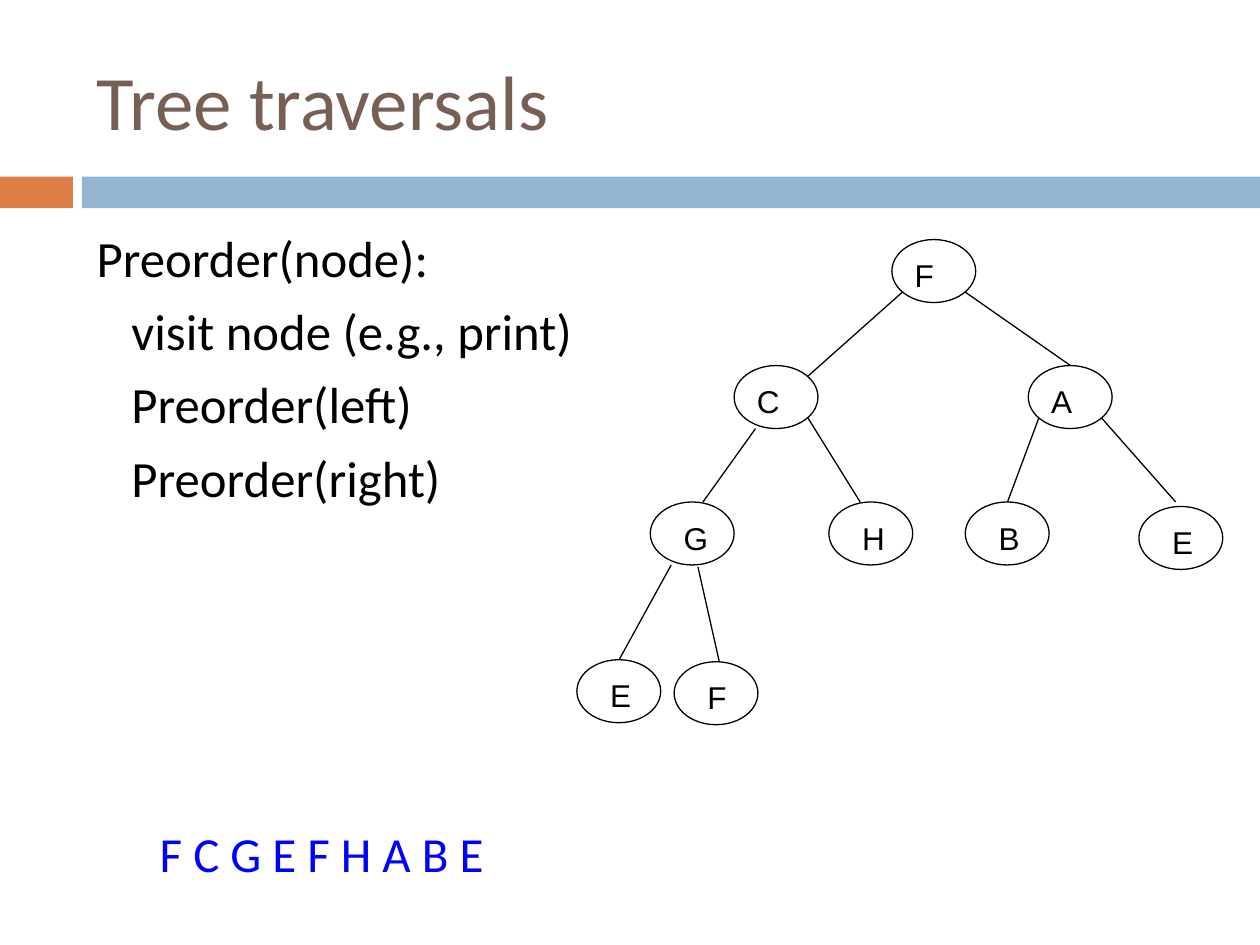
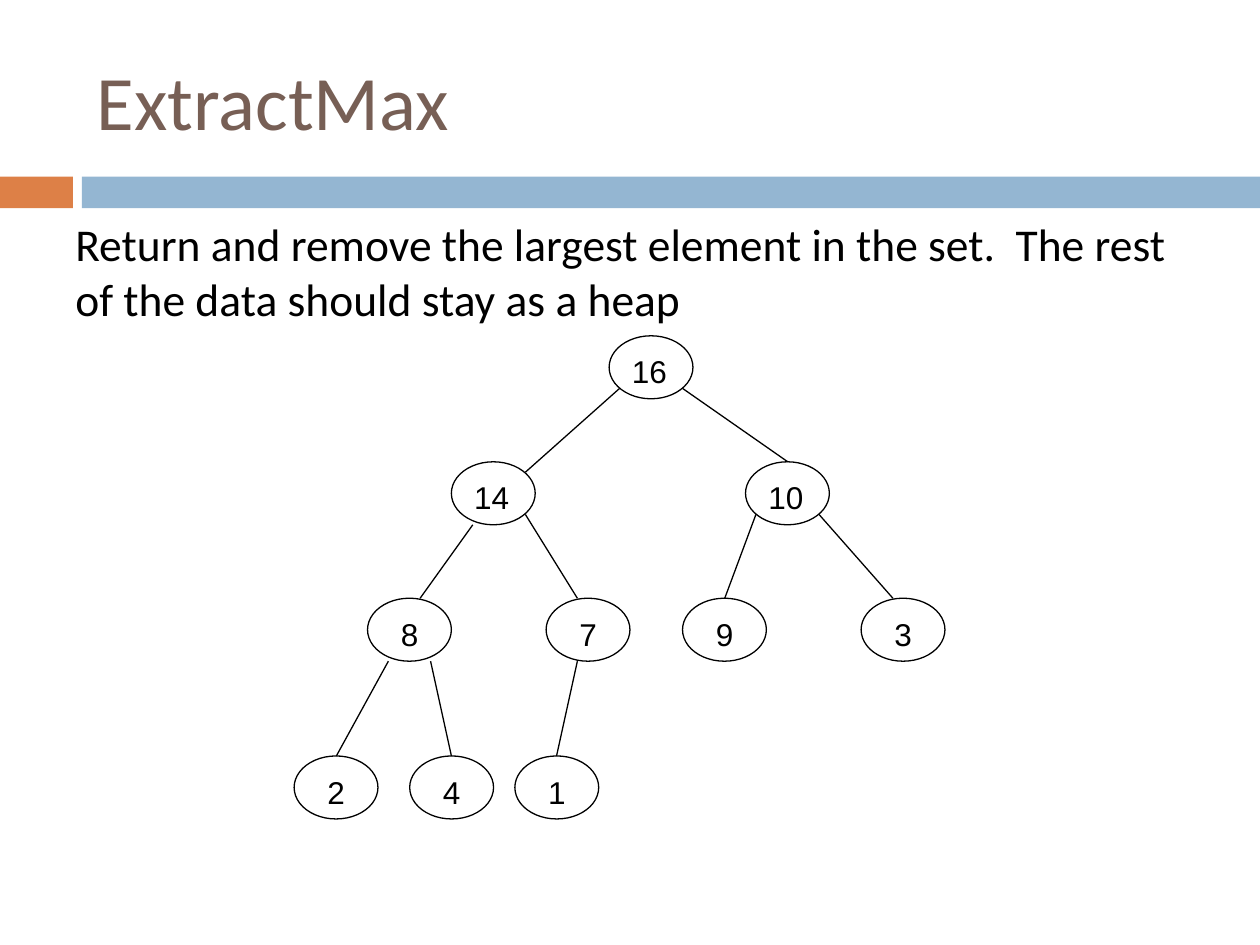
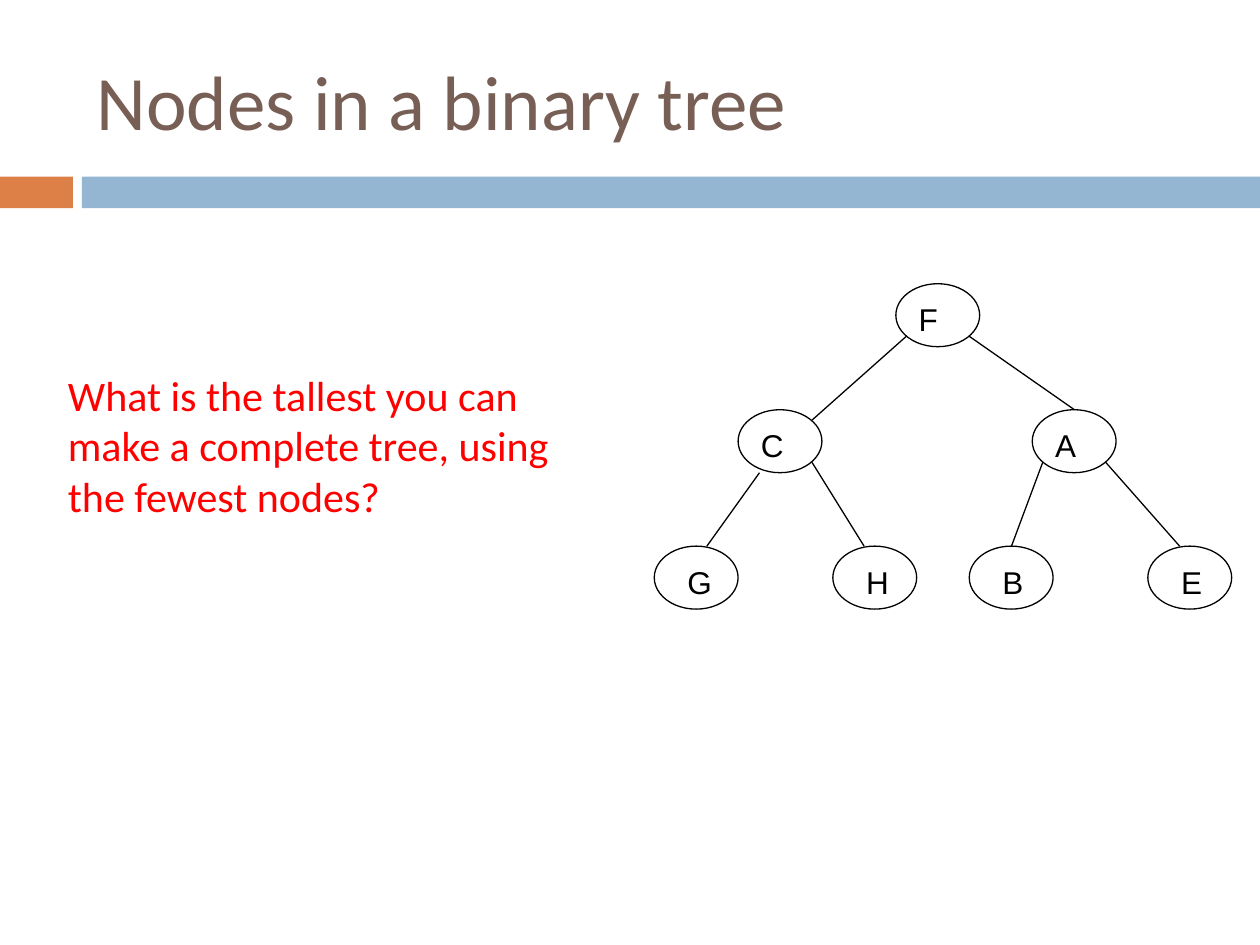
from lxml import etree
from pptx import Presentation
from pptx import util as u
from pptx.dml.color import RGBColor
from pptx.enum import shapes, text
from pptx.oxml.ns import qn

NODE_WIDTH, NODE_HEIGHT = 1.69, 1.27
LEVEL_TOPS = [0, 2.54, 5.29, 8.47]
LABEL_INSETS = [0.21, 0.21, 0.42, 0.42]
LEVEL_LEFTS = [[0], [-3.18, 2.75], [-4.87, -1.27, 1.48, 5.08]]
UPPER_EDGES = [
    (0.21, 1.06, -1.69, 2.75),
    (1.48, 1.06, 3.6, 2.54),
    (-2.75, 3.81, -3.81, 5.29),
    (-1.69, 3.6, -0.64, 5.29),
    (2.96, 3.6, 2.33, 5.29),
    (4.23, 3.6, 5.72, 5.29),
]
FIRST_LEAF_EDGE = (-4.45, 6.56, -5.5, 8.47)
LETTERS = [["F"], ["C", "A"], ["G", "H", "B", "E"]]
NUMBERS = [["16"], ["14", "10"], ["8", "7", "9", "3"], ["2", "4", "1"]]


def color(value):
    return RGBColor.from_string(value)


class Deck:
    black, blue, red = "000000", "0000FF", "FF0000"
    title_color, accent, band = "775F55", "DD8047", "94B6D2"
    body_font, node_font = "Calibri", "Arial"

    def __init__(self):
        self.presentation = Presentation()
        self.presentation.slide_width = u.Cm(25.4)
        self.presentation.slide_height = u.Cm(19.05)
        self.slide = None

    def add_slide(self, title):
        self.slide = self.presentation.slides.add_slide(self.presentation.slide_layouts[6])
        self.add_band(0, 1.47, self.accent)
        self.add_band(1.65, 23.75, self.band)
        frame = self.add_text([title], 1.7, 0.64, 22.66, 2.74, 44, self.title_color)
        frame.vertical_anchor = text.MSO_ANCHOR.MIDDLE

    def add_band(self, left, width, fill):
        shape = self.slide.shapes.add_shape(
            shapes.MSO_SHAPE.RECTANGLE, u.Cm(left), u.Cm(3.56), u.Cm(width), u.Cm(0.64))
        shape.shadow.inherit = False
        shape.fill.solid()
        shape.fill.fore_color.rgb = color(fill)
        shape.line.fill.background()

    def add_text(self, lines, left, top, width, height, size, ink,
                 font=body_font, wrap=True, spacing=0, indent=0, parent=None):
        box = (parent or self.slide).shapes.add_textbox(
            u.Cm(left), u.Cm(top), u.Cm(width), u.Cm(height))
        frame = box.text_frame
        frame.text = "\n".join(lines)
        frame.word_wrap = wrap
        for number, paragraph in enumerate(frame.paragraphs):
            paragraph.space_before = u.Pt(spacing)
            if number and indent:
                paragraph._p.get_or_add_pPr().set("marL", str(u.Cm(indent)))
            for run in paragraph.runs:
                run.font.name = font
                run.font.size = u.Pt(size)
                run.font.color.rgb = color(ink)
        return frame

    def add_node(self, label, left, top, inset):
        group = self.slide.shapes.add_group_shape()
        shape = group.shapes.add_shape(
            shapes.MSO_SHAPE.OVAL, u.Cm(left), u.Cm(top), u.Cm(NODE_WIDTH), u.Cm(NODE_HEIGHT))
        shape.shadow.inherit = False
        shape.fill.background()
        shape.line.color.rgb = color(self.black)
        shape.line.width = u.Pt(0.75)
        self.add_text([label], left + inset, top + 0.21, 1.47, 1.02, 18, self.black,
                      font=self.node_font, parent=group)

    def add_edge(self, start_x, start_y, end_x, end_y):
        connector = self.slide.shapes.add_connector(
            shapes.MSO_CONNECTOR.STRAIGHT,
            u.Cm(start_x), u.Cm(start_y), u.Cm(end_x), u.Cm(end_y))
        connector.line.color.rgb = color(self.black)
        connector.line.width = u.Pt(0.75)
        etree.SubElement(connector._element.spPr, qn("a:effectLst"))

    def add_tree(self, left, top, labels, leaf_lefts=(), leaf_edges=(), shifts=None):
        shifts = shifts or {}
        for start_x, start_y, end_x, end_y in [*UPPER_EDGES, *leaf_edges]:
            self.add_edge(left + start_x, top + start_y, left + end_x, top + end_y)
        for level, (row, lefts) in enumerate(zip(labels, [*LEVEL_LEFTS, leaf_lefts])):
            for column, (label, offset) in enumerate(zip(row, lefts)):
                shift_x, shift_y = shifts.get((level, column), (0, 0))
                self.add_node(label, left + offset + shift_x,
                              top + LEVEL_TOPS[level] + shift_y, LABEL_INSETS[level])


def main():
    deck = Deck()

    deck.add_slide("Tree traversals")
    deck.add_text(
        ["Preorder(node):", "visit node (e.g., print)", "Preorder(left)", "Preorder(right)"],
        1.7, 4.45, 22.66, 12.5, 29, deck.black, spacing=7, indent=0.7)
    deck.add_tree(
        17.98, 4.83, [*LETTERS, ["E", "F"]], [-6.35, -4.39],
        [FIRST_LEAF_EDGE, (-3.91, 6.6, -3.48, 8.51)],
        {(2, 3): (-0.1, 0.09), (3, 1): (0, 0.04)})
    deck.add_text(["F C G E F H A B E"], 2.97, 16.48, 7.54, 1.45, 28, deck.blue, wrap=False)

    deck.add_slide("ExtractMax")
    deck.add_tree(
        12.28, 6.77, NUMBERS, [-6.35, -4.02, -1.9],
        [FIRST_LEAF_EDGE, (-3.6, 6.56, -3.18, 8.47), (-0.64, 6.56, -1.06, 8.47)])
    deck.add_text(
        ["Return and remove the largest element in the set.  "
         "The rest of the data should stay as a heap"],
        1.27, 4.24, 23.09, 2.29, 26, deck.black, spacing=7)

    deck.add_slide("Nodes in a binary tree")
    deck.add_tree(18.06, 5.72, LETTERS)
    deck.add_text(
        ["What is the tallest you can make a complete tree, using the fewest nodes?"],
        1.12, 7.32, 10.59, 3.33, 24, deck.red)

    deck.presentation.save("out.pptx")


if __name__ == "__main__":
    main()
